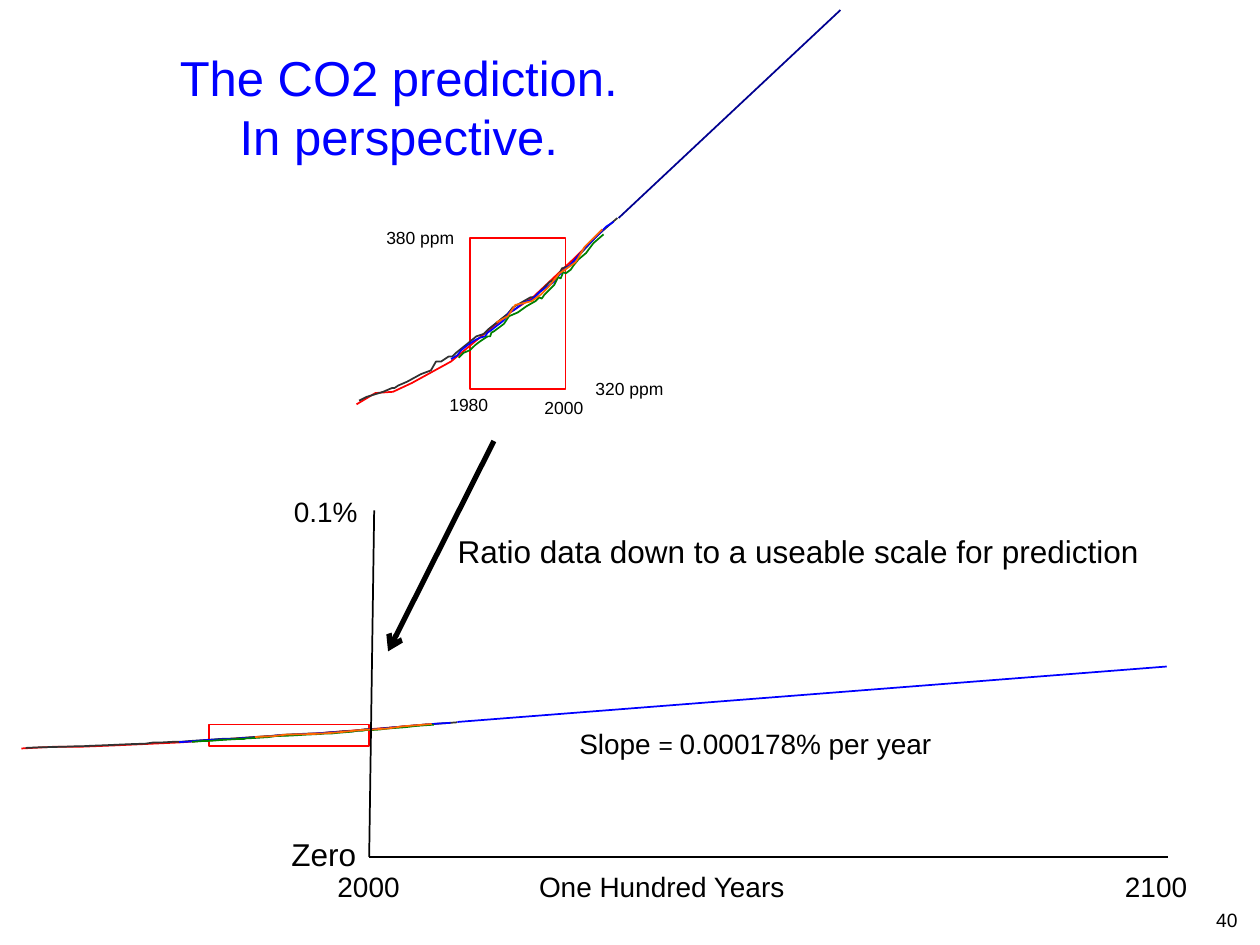
from lxml import etree
from pptx import Presentation
from pptx.dml.color import RGBColor as RGB
from pptx.enum.shapes import MSO_CONNECTOR as LINK, MSO_SHAPE as SHAPE
from pptx.enum.text import PP_ALIGN as ALIGN
from pptx.oxml.ns import qn
from pptx.util import Inches, Pt

# Yearly CO2 curves in inches on the steep chart, latest point first.
CURVES = [
    ("FF0000", [
        (4.76, 1.85), (4.57, 2.04), (4.23, 2.36), (4.05, 2.48), (3.82, 2.67),
        (3.58, 2.87), (3.27, 3.04), (3.12, 3.11), (2.98, 3.12), (2.83, 3.21)]),
    ("323232", [
        (4.9, 1.73), (4.74, 1.87), (4.61, 2.01), (4.52, 2.11), (4.46, 2.13),
        (4.42, 2.21), (4.36, 2.24), (4.24, 2.36), (4.21, 2.36), (4.07, 2.44),
        (4.03, 2.49), (3.88, 2.61), (3.84, 2.65), (3.78, 2.67), (3.72, 2.72),
        (3.62, 2.8), (3.59, 2.83), (3.56, 2.83), (3.5, 2.87), (3.46, 2.87),
        (3.42, 2.94), (3.34, 2.97), (3.23, 3.03), (3.16, 3.06), (3.13, 3.08),
        (3.11, 3.08), (3.04, 3.11), (2.91, 3.15), (2.85, 3.18)]),
    ("0000FF", [
        (4.87, 1.76), (4.81, 1.8), (4.73, 1.88), (4.65, 1.96), (4.59, 2.03),
        (4.53, 2.1), (4.48, 2.14), (4.43, 2.19), (4.41, 2.23), (4.35, 2.27),
        (4.28, 2.32), (4.22, 2.38), (4.16, 2.4), (4.08, 2.46), (4.04, 2.48),
        (4.01, 2.53), (3.99, 2.55), (3.95, 2.58), (3.9, 2.62), (3.87, 2.64),
        (3.85, 2.67), (3.81, 2.68), (3.77, 2.7), (3.71, 2.74), (3.66, 2.78),
        (3.63, 2.82), (3.58, 2.85)]),
    ("008000", [
        (4.79, 1.86), (4.71, 1.93), (4.65, 2.01), (4.59, 2.06), (4.55, 2.11),
        (4.53, 2.14), (4.49, 2.17), (4.47, 2.16), (4.45, 2.21), (4.43, 2.2),
        (4.4, 2.26), (4.37, 2.29), (4.32, 2.34), (4.3, 2.37), (4.28, 2.36),
        (4.25, 2.39), (4.18, 2.43), (4.11, 2.48), (4.04, 2.51), (4, 2.57),
        (3.92, 2.63), (3.9, 2.64), (3.89, 2.67), (3.87, 2.67), (3.81, 2.71),
        (3.77, 2.74), (3.73, 2.78), (3.68, 2.8), (3.64, 2.84)]),
    ("FF6600", [
        (4.78, 1.82), (4.64, 1.96), (4.57, 2.08), (4.5, 2.13), (4.44, 2.17),
        (4.36, 2.27), (4.29, 2.34), (4.22, 2.39), (4.14, 2.41), (4.09, 2.42),
        (4.03, 2.51), (3.94, 2.56)]),
]


def paint(line, color, width=1):
    line.color.rgb = RGB.from_string(color)
    line.width = Pt(width)


def steep(x, y):
    return x, y


def flat(x, y):
    """Map a point of the steep chart to the full-scale chart."""
    return 0.17 + (x - 2.83) * 1.67, 5.75 + (y - 1.85) * 0.14


def add_line(shapes, start, end, color, width=1, arrow=False):
    link = shapes.add_connector(LINK.STRAIGHT, *map(Inches, start + end))
    paint(link.line, color, width)
    props = link.line._get_or_add_ln()
    if arrow:
        etree.SubElement(props, qn("a:tailEnd"), type="arrow")
    etree.SubElement(link._element.spPr, qn("a:effectLst"))


def add_curve(shapes, points, color):
    spots = [(Inches(x), Inches(y)) for x, y in points]
    pen = shapes.build_freeform(*spots[0])
    pen.add_line_segments(spots[1:], close=False)
    curve = pen.convert_to_shape()
    curve.shadow.inherit = False
    curve.fill.background()
    paint(curve.line, color)


def add_frame(shapes, *place):
    frame = shapes.add_shape(SHAPE.RECTANGLE, *map(Inches, place))
    frame.shadow.inherit = False
    frame.fill.background()
    paint(frame.line, "FF0000")


def add_chart_lines(slide, place, frame, lines):
    """Group the framed period, the curves and the straight lines."""
    shapes = slide.shapes.add_group_shape().shapes
    add_frame(shapes, *frame)
    for color, points in CURVES:
        add_curve(shapes, [place(x, y) for x, y in points], color)
    for start, end, color in lines:
        add_line(shapes, start, end, color)


def add_text(slide, place, rows, size, color="000000", align=ALIGN.CENTER,
             tabs=()):
    """Add a text box; each row is a list of (text, own size or None)."""
    box = slide.shapes.add_textbox(*map(Inches, place))
    frame = box.text_frame
    frame.word_wrap = True
    for i, row in enumerate(rows):
        para = frame.add_paragraph() if i else frame.paragraphs[0]
        para.alignment = align
        if tabs:
            stops = etree.SubElement(para._p.get_or_add_pPr(), qn("a:tabLst"))
            for tab in tabs:
                etree.SubElement(stops, qn("a:tab"), pos=str(Inches(tab)),
                                 algn="l")
        font = para.font
        font.name, font.size = "Arial", Pt(size)
        font.color.rgb = RGB.from_string(color)
        for text, own in row:
            run = para.add_run()
            run.text = text
            if own:
                run.font.size = Pt(own)


def add_label(slide, place, text, size, **look):
    add_text(slide, place, [[(text, None)]], size, **look)


def main():
    deck = Presentation()
    deck.slide_width, deck.slide_height = Inches(10), Inches(7.5)
    slide = deck.slides.add_slide(deck.slide_layouts[6])

    add_chart_lines(slide, steep, (3.73, 1.89, 0.76, 1.2),
                    [((4.91, 1.73), (6.67, 0.08), "000090")])
    add_chart_lines(slide, flat, (1.66, 5.75, 1.27, 0.17),
                    [((2.93, 6.8), (9.27, 6.8), "000000"),
                     ((2.93, 6.8), (2.97, 4.05), "000000"),
                     ((3.63, 5.73), (9.26, 5.29), "0000FF")])

    add_label(slide, (2.58, 6.85, 7.08, 0.37),
              "2000\tOne Hundred Years\t2100", 16, align=ALIGN.LEFT,
              tabs=(1.6, 6.25))
    for place, text, size in [
        ((2.17, 3.88, 0.83, 0.37), "0.1%", 16),
        ((2.11, 6.58, 0.92, 0.4), "Zero", 18),
        ((3.43, 3.08, 0.58, 0.27), "1980", 10),
        ((4.19, 3.1, 0.57, 0.27), "2000", 10),
        ((2.92, 1.75, 0.83, 0.27), "380 ppm", 10),
        ((4.58, 2.95, 0.83, 0.27), "320 ppm", 10),
    ]:
        add_label(slide, place, text, size)

    add_line(slide.shapes, (3.92, 3.5), (3.08, 5.17), "000000", 3, arrow=True)
    add_label(slide, (3.46, 4.17, 5.75, 0.4),
              "Ratio data down to a useable scale for prediction", 18)
    add_text(slide, (0.58, 0.33, 5.17, 1.04),
             [[("The CO2 prediction.", None)], [("In perspective.", None)]],
             28, color="0000FF")
    add_text(slide, (4.5, 5.72, 3.5, 0.37),
             [[("Slope ", None), ("= ", 14), ("0.000178% per year", None)]],
             16, align=ALIGN.LEFT)
    add_label(slide, (8.5, 7.16, 1.42, 0.34), "40", 11, align=ALIGN.RIGHT)

    deck.save("out.pptx")


if __name__ == "__main__":
    main()
